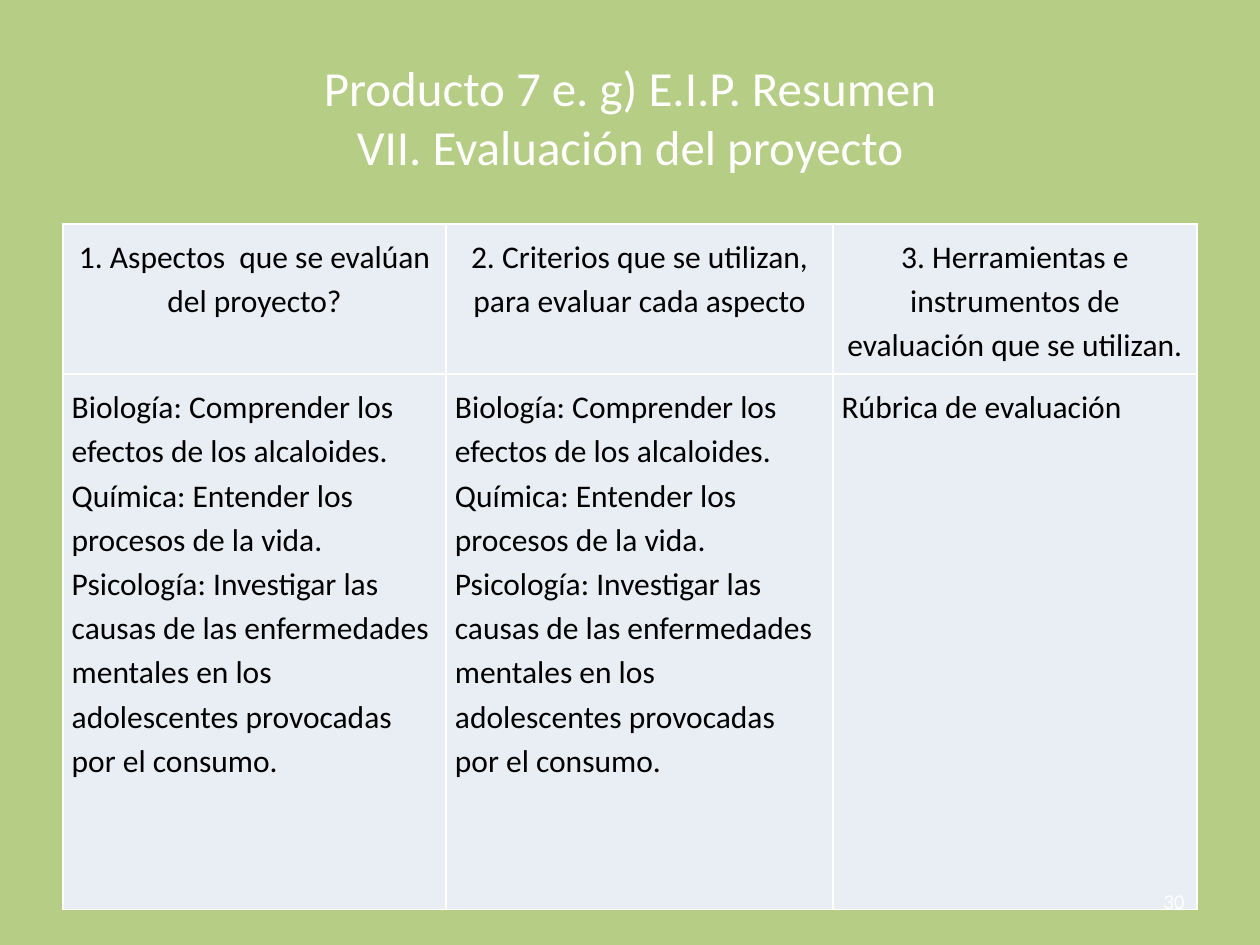
"""Build the project evaluation slide: a title, a three-column table and a page number."""
from copy import deepcopy

from lxml.etree import SubElement
from pptx import Presentation
from pptx.dml.color import RGBColor
from pptx.enum.text import MSO_ANCHOR as Anchor, PP_ALIGN as Align
from pptx.oxml.ns import qn
from pptx.util import Pt

TITLE = "Producto 7 e. g) E.I.P. Resumen\vVII. Evaluación del proyecto"
GOALS = [
    "Biología: Comprender los efectos de los alcaloides.",
    "Química: Entender los procesos de la vida.",
    "Psicología: Investigar las causas de las enfermedades mentales "
    "en los adolescentes provocadas por el consumo.",
]
ROWS = [
    [
        ["1. Aspectos  que se evalúan del proyecto?"],
        ["2. Criterios que se utilizan, para evaluar cada aspecto"],
        ["3. Herramientas e instrumentos de evaluación que se utilizan."],
    ],
    [GOALS, GOALS, ["Rúbrica de evaluación"]],
]
ALIGNS = [Align.CENTER, Align.LEFT]
WIDTHS = [219, 221, 208]
HEIGHTS = [85, 306]
PAGE = "30"
WHITE, BLACK, GREEN, PALE = "FFFFFF", "000000", "B5CD84", "E9EDF4"


def paint(fill, color):
    fill.solid()
    fill.fore_color.rgb = RGBColor.from_string(color)


def write(frame, lines, size=18, color=WHITE, align=Align.LEFT, space=1.0):
    frame.word_wrap = True
    for i, line in enumerate(lines):
        para = frame.add_paragraph() if i else frame.paragraphs[0]
        para.text = line
        para.alignment = align
        para.line_spacing = space
        for run in para.runs:
            run.font.size = Pt(size)
            run.font.name = "Calibri"
            run.font.color.rgb = RGBColor.from_string(color)
        for gap in para._p.findall(qn("a:br")):
            gap.append(deepcopy(para.runs[0]._r.rPr))


def edge(cell, color, width):
    props = cell._tc.get_or_add_tcPr()
    for i, side in enumerate(("lnL", "lnR", "lnT", "lnB")):
        line = props.makeelement(qn("a:" + side), {"w": str(Pt(width))})
        fill = SubElement(line, qn("a:solidFill"))
        SubElement(fill, qn("a:srgbClr"), val=color)
        props.insert(i, line)


def place(shape, left, top, width, height):
    shape.left, shape.top = Pt(left), Pt(top)
    shape.width, shape.height = Pt(width), Pt(height)


def add_grid(slide, left, top):
    table = slide.shapes.add_table(
        len(ROWS), len(WIDTHS), Pt(left), Pt(top), Pt(sum(WIDTHS)), Pt(sum(HEIGHTS))
    ).table
    table.first_row = table.horz_banding = False
    for col, width in zip(table.columns, WIDTHS):
        col.width = Pt(width)
    for row, height, texts, align in zip(table.rows, HEIGHTS, ROWS, ALIGNS):
        row.height = Pt(height)
        for cell, lines in zip(row.cells, texts):
            cell.margin_left = cell.margin_right = Pt(5)
            cell.margin_top = cell.margin_bottom = Pt(5)
            paint(cell.fill, PALE)
            edge(cell, WHITE, 1)
            write(cell.text_frame, lines, color=BLACK, align=align, space=1.15)


def main():
    deck = Presentation()
    deck.slide_width, deck.slide_height = Pt(720), Pt(540)
    slide = deck.slides.add_slide(deck.slide_layouts[5])
    paint(slide.background.fill, GREEN)

    title = slide.shapes.title
    place(title, 36, 21.6, 648, 90)
    title.text_frame.vertical_anchor = Anchor.MIDDLE
    write(title.text_frame, [TITLE], size=28, align=Align.CENTER)

    add_grid(slide, 36, 128)

    page = slide.shapes.add_textbox(Pt(516), Pt(500.5), Pt(168), Pt(28.8))
    page.text_frame.vertical_anchor = Anchor.MIDDLE
    write(page.text_frame, [PAGE], size=12, align=Align.RIGHT)
    deck.save("out.pptx")


if __name__ == "__main__":
    main()
